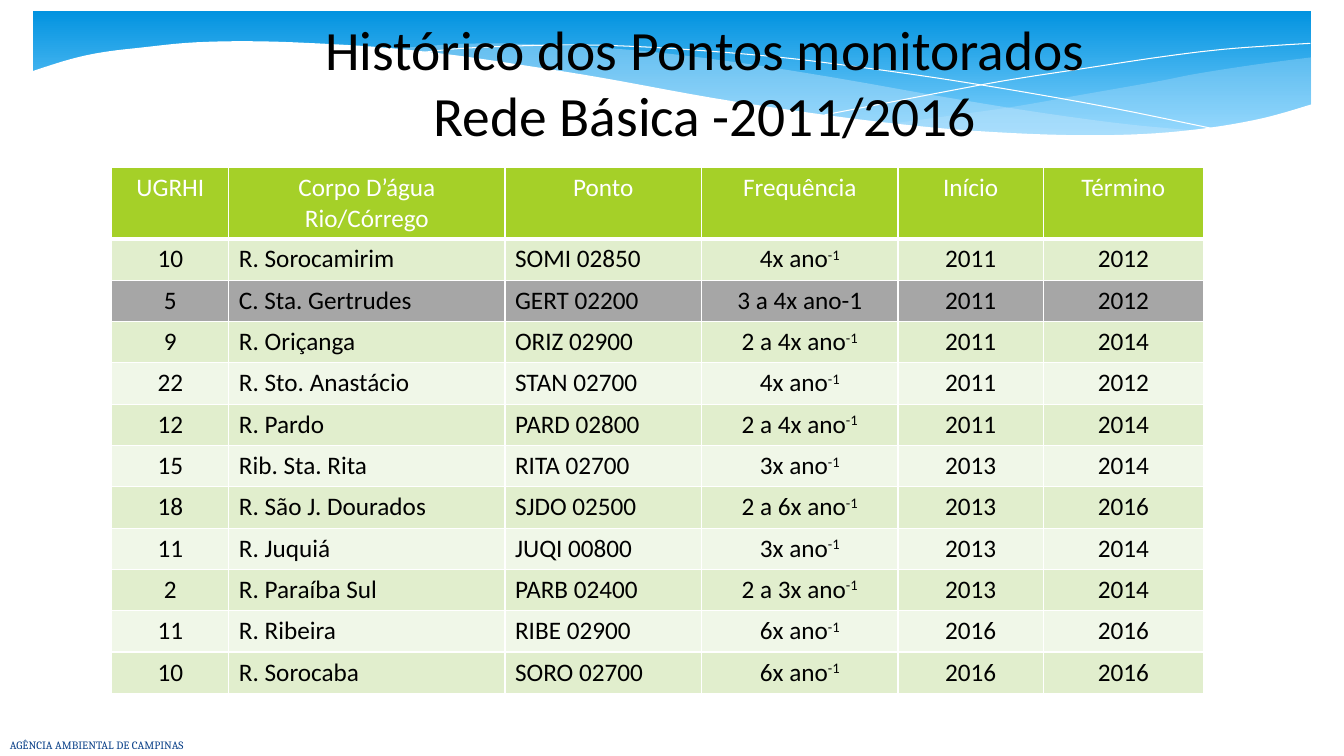
from dataclasses import dataclass

from lxml.etree import SubElement
from pptx import Presentation
from pptx.dml.color import RGBColor
from pptx.enum.shapes import MSO_SHAPE
from pptx.enum.text import MSO_ANCHOR, MSO_AUTO_SIZE, PP_ALIGN
from pptx.oxml import parse_xml
from pptx.oxml.ns import nsdecls, qn
from pptx.util import Inches, Pt

COLUMNS, ROWS = 133.33, 75


@dataclass(frozen=True)
class Theme:
    body_font: str = "Calibri"
    footer_font: str = "Cambria"
    title_size: float = 39.6
    table_size: float = 18
    footer_size: float = 8
    ink: str = "000000"
    white: str = "FFFFFF"
    footer: str = "073E87"
    sky_dark: str = "0293E0"
    sky_light: str = "83D3FE"
    wave: str = "C6E7FC"
    header: str = "A5D028"
    band_dark: str = "E1EECD"
    band_light: str = "F0F7E8"
    highlight: str = "A6A6A6"


def write(frame, text, *, font, size, color, align=PP_ALIGN.LEFT):
    """Newline starts a paragraph, vertical tab breaks a line, ^ starts a superscript."""
    for index, content in enumerate(text.split("\n")):
        paragraph = frame.add_paragraph() if index else frame.paragraphs[0]
        paragraph.alignment = align
        for line_index, line in enumerate(content.split("\v")):
            if line_index:
                paragraph.add_line_break()
            for raised, part in enumerate(line.split("^")):
                run = paragraph.add_run()
                run.text = part
                run.font.name, run.font.size = font, Pt(size)
                run.font.color.rgb = RGBColor.from_string(color)
                if raised:
                    run._r.get_or_add_rPr().set("baseline", "30000")


def smooth(points, steps=5):
    """Sample a Catmull-Rom curve through the points."""
    padded = [points[0], *points, points[-1]]
    sampled = [points[0]]
    for a, b, c, d in zip(padded, padded[1:], padded[2:], padded[3:]):
        for step in range(1, steps + 1):
            t = step / steps
            sampled.append(tuple(
                (2 * q + (r - p) * t + (2 * p - 5 * q + 4 * r - s) * t ** 2
                 + (3 * q - p - 3 * r + s) * t ** 3) / 2
                for p, q, r, s in zip(a, b, c, d)))
    return sampled


class SlideBuilder:
    def __init__(self, presentation, theme):
        self.theme = theme
        self.column = presentation.slide_width / COLUMNS
        self.row = presentation.slide_height / ROWS
        self.slide = presentation.slides.add_slide(presentation.slide_layouts[5])
        self.shapes = self.slide.shapes

    def place(self, left, top, width, height):
        return (round(left * self.column), round(top * self.row),
                round(width * self.column), round(height * self.row))

    def sky(self, *box):
        shape = self.shapes.add_shape(MSO_SHAPE.ROUNDED_RECTANGLE, *self.place(*box))
        shape.adjustments[0] = 0
        shape.shadow.inherit = False
        shape.line.fill.background()
        shape.fill.gradient()
        shape.fill.gradient_angle = 270
        colors = (self.theme.sky_dark, self.theme.sky_light)
        for stop, color, position in zip(shape.fill.gradient_stops, colors, (0, 0.9)):
            stop.color.rgb = RGBColor.from_string(color)
            stop.position = position

    def wave(self, *curves, fill=None, opacity=100):
        """Draw a closed filled wave, or an open white hairline when fill is None."""
        points = [(round(x * self.column), round(y * self.row))
                  for curve in curves for x, y in smooth(curve)]
        builder = self.shapes.build_freeform(*points[0], scale=1.0)
        builder.add_line_segments(points[1:], close=fill is not None)
        shape = builder.convert_to_shape()
        shape.shadow.inherit = False
        if fill is None:
            shape.fill.background()
            shape.line.color.rgb = RGBColor.from_string(self.theme.white)
            shape.line.width = Pt(0)
            return
        shape.line.fill.background()
        shape.fill.solid()
        shape.fill.fore_color.rgb = RGBColor.from_string(fill)
        if opacity < 100:
            color = shape._element.spPr.find(qn("a:solidFill"))[0]
            SubElement(color, qn("a:alpha")).set("val", str(opacity * 1000))

    def title(self, text, *box):
        title = self.shapes.title
        self.shapes._spTree.append(title._element)
        title.left, title.top, title.width, title.height = self.place(*box)
        frame = title.text_frame
        frame.auto_size = MSO_AUTO_SIZE.NONE
        frame.vertical_anchor = MSO_ANCHOR.MIDDLE
        write(frame, text, font=self.theme.body_font, size=self.theme.title_size,
              color=self.theme.ink, align=PP_ALIGN.CENTER)

    def footer(self, text, *box):
        frame = self.shapes.add_textbox(*self.place(*box)).text_frame
        frame.word_wrap = True
        frame.margin_top = frame.margin_bottom = 0
        frame.vertical_anchor = MSO_ANCHOR.MIDDLE
        write(frame, text, font=self.theme.footer_font, size=self.theme.footer_size,
              color=self.theme.footer)

    def cell(self, cell, text, *, fill, color, align, bottom=1):
        write(cell.text_frame, text, font=self.theme.body_font,
              size=self.theme.table_size, color=color, align=align)
        cell.fill.solid()
        cell.fill.fore_color.rgb = RGBColor.from_string(fill)
        properties = cell._tc.get_or_add_tcPr()
        for index, (side, width) in enumerate(zip("LRTB", (1, 1, 1, bottom))):
            properties.insert(index, parse_xml(
                f'<a:ln{side} {nsdecls("a")} w="{Pt(width)}"><a:solidFill>'
                f'<a:srgbClr val="{self.theme.white}"/></a:solidFill></a:ln{side}>'))

    def table(self, left, top, widths, heights, header, records, highlighted):
        theme = self.theme
        box = self.place(left, top, sum(widths), sum(heights))
        table = self.shapes.add_table(len(heights), len(widths), *box).table
        table.first_row = table.horz_banding = False
        for column, width in zip(table.columns, widths):
            column.width = round(width * self.column)
        for row, height in zip(table.rows, heights):
            row.height = round(height * self.row)
        for index, text in enumerate(header):
            self.cell(table.cell(0, index), text, fill=theme.header, color=theme.white,
                      align=PP_ALIGN.CENTER, bottom=3)
        for number, record in enumerate(records, 1):
            fill = theme.band_dark if number % 2 else theme.band_light
            if number == highlighted:
                fill = theme.highlight
            for index, text in enumerate(record):
                align = PP_ALIGN.LEFT if index in (1, 2) else PP_ALIGN.CENTER
                self.cell(table.cell(number, index), text, fill=fill,
                          color=theme.ink, align=align)


RIGHT_WAVE = (
    [(130, 5.7), (124.6, 6.4), (118.8, 7.3), (114.7, 8.1), (107.3, 9.4), (100.5, 10.6),
     (94.1, 11.5), (88.2, 12.3)],
    [(88.2, 12.3), (94, 12.9), (100.9, 13.3), (107.1, 13.5), (113.8, 13.3),
     (119.6, 12.8), (124.7, 11.9), (130.1, 10.5)],
    [(130.1, 5.7)])
CENTRE_WAVE = (
    [(119, 13), (111.6, 12.3), (103.4, 11.2), (94.1, 9.7), (83.9, 7.9), (75.9, 6.6),
     (68.6, 5.6), (61.9, 4.9), (53.2, 4.4), (45.9, 4.35), (38.2, 4.9)],
    [(38.2, 4.9), (45.6, 5.7), (53.9, 6.9), (59.9, 7.9), (70.6, 9.8), (80.2, 11.3),
     (88.7, 12.4), (96.3, 13.1), (103, 13.5), (110.4, 13.6), (115.6, 13.3), (119, 13)])
FALLING_LINE = [(41.2, 5.3), (45.8, 4.8), (53.5, 4.5), (60, 4.5), (68, 4.9), (77.5, 5.7),
                (84.8, 6.6), (92.7, 7.7), (101.4, 9.1), (110.8, 10.8), (121, 12.9)]
RISING_LINE = [(81.8, 11.4), (87, 10.4), (92.7, 9.3), (99.7, 8), (107.5, 6.8),
               (115.5, 5.6), (121.3, 4.9), (126.7, 4.5), (130, 4.3)]
WHITE_WAVE = (
    [(130.3, 10.3), (125.4, 11.7), (119.8, 12.7), (113.4, 13.3), (105.8, 13.4),
     (96.9, 13), (89.1, 12.3), (80.4, 11.2), (70.6, 9.7), (59.6, 7.7), (52.1, 6.5),
     (45.3, 5.5), (39, 4.8), (33.3, 4.4), (25.8, 4.1), (19.4, 4.2), (14.2, 4.7),
     (10.1, 5.2), (6.9, 5.9), (3.1, 7.1)],
    [(3.1, 18.7), (130.3, 18.7)])

HEADER = ("UGRHI", "Corpo D’água\nRio/Córrego", "Ponto", "Frequência", "Início", "Término")
MONITORING_POINTS = (
    ("10", "R. Sorocamirim", "SOMI 02850", "4x ano^-1", "2011", "2012"),
    ("5", "C. Sta. Gertrudes", "GERT 02200", "3 a 4x ano-1", "2011", "2012"),
    ("9", "R. Oriçanga", "ORIZ 02900", "2 a 4x ano^-1", "2011", "2014"),
    ("22", "R. Sto. Anastácio", "STAN 02700", "4x ano^-1", "2011", "2012"),
    ("12", "R. Pardo", "PARD 02800", "2 a 4x ano^-1", "2011", "2014"),
    ("15", "Rib. Sta. Rita", "RITA 02700", "3x ano^-1", "2013", "2014"),
    ("18", "R. São J. Dourados", "SJDO 02500", "2 a 6x ano^-1", "2013", "2016"),
    ("11", "R. Juquiá", "JUQI 00800", "3x ano^-1", "2013", "2014"),
    ("2", "R. Paraíba Sul", "PARB 02400", "2 a 3x ano^-1", "2013", "2014"),
    ("11", "R. Ribeira", "RIBE 02900", "6x ano^-1", "2016", "2016"),
    ("10", "R. Sorocaba", "SORO 02700", "6x ano^-1", "2016", "2016"),
)


def main():
    presentation = Presentation()
    presentation.slide_width, presentation.slide_height = Inches(13.33), Inches(7.5)
    theme = Theme()
    builder = SlideBuilder(presentation, theme)
    builder.sky(3.3, 1.1, 126.8, 13.6)
    builder.wave(*RIGHT_WAVE, fill=theme.wave, opacity=29)
    builder.wave(*CENTRE_WAVE, fill=theme.wave, opacity=40)
    builder.wave(FALLING_LINE)
    builder.wave(RISING_LINE)
    builder.wave(*WHITE_WAVE, fill=theme.white)
    builder.footer("AGÊNCIA AMBIENTAL DE CAMPINAS", 0, 72.9, 55.2, 2)
    builder.title("Histórico dos Pontos monitorados\vRede Básica -2011/2016",
                  3.7, 0.8, 132.5, 14.5)
    builder.table(11.1, 16.6, (11.6, 27.4, 19.5, 19.5, 14.4, 15.9),
                  [7.1] + [4.1] * len(MONITORING_POINTS),
                  HEADER, MONITORING_POINTS, highlighted=2)
    presentation.save("out.pptx")


if __name__ == "__main__":
    main()
